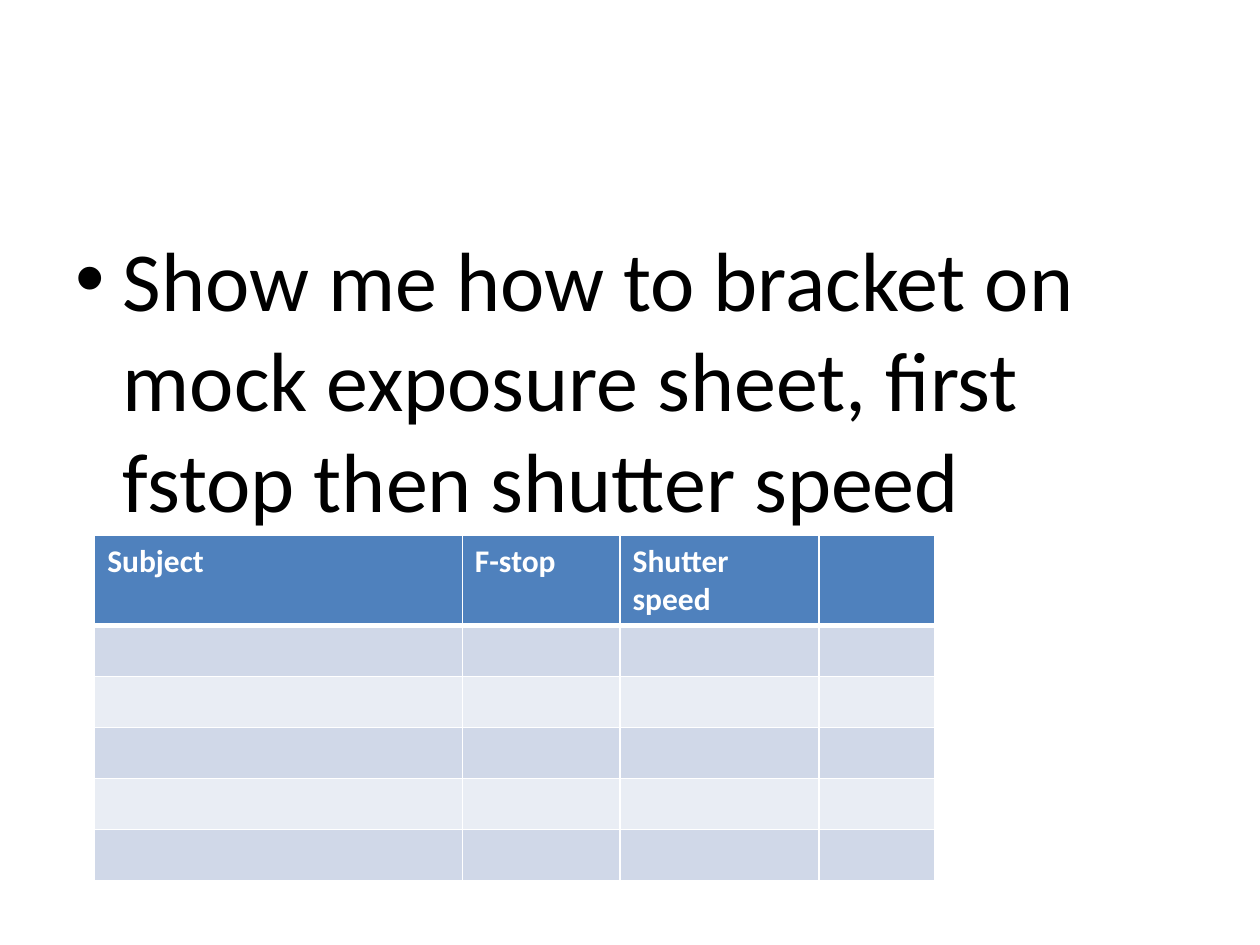
from lxml import etree
from pptx import Presentation
from pptx.dml.color import RGBColor
from pptx.oxml.ns import qn
from pptx.util import Cm, Pt

BLACK = RGBColor(0x00, 0x00, 0x00)
WHITE = RGBColor(0xFF, 0xFF, 0xFF)
HEADER_BLUE = RGBColor(0x4F, 0x81, 0xBD)
BAND_DARK = RGBColor(0xD0, 0xD8, 0xE8)
BAND_LIGHT = RGBColor(0xE9, 0xED, 0xF4)

TITLE_AND_CONTENT = 1
HEADERS = ["Subject", "F-stop", "Shutter speed", ""]
COLUMN_WIDTHS = [7.41, 3.18, 4.01, 2.33]
BLANK_ROWS = 5
ROW_HEIGHT = 1.03


class SlideBuilder:
    font = "Calibri"

    def __init__(self, prs):
        self.s = prs.slides.add_slide(prs.slide_layouts[TITLE_AND_CONTENT])

    def add_run(self, p, text, size, color, bold=False):
        r = p.add_run()
        r.text = text
        r.font.name = self.font
        r.font.size = Pt(size)
        r.font.bold = bold
        r.font.color.rgb = color

    def drop_title(self):
        sp = self.s.shapes.title.element
        sp.getparent().remove(sp)

    def body(self, text, left, top, width, height):
        sp = self.s.placeholders[1]
        sp.left, sp.top = Cm(left), Cm(top)
        sp.width, sp.height = Cm(width), Cm(height)
        self.add_run(sp.text_frame.paragraphs[0], text, 48, BLACK)

    def borders(self, cell, top, bottom):
        tc_pr = cell._tc.get_or_add_tcPr()
        widths = {"a:lnL": 1, "a:lnR": 1, "a:lnT": top, "a:lnB": bottom}
        for i, (tag, width) in enumerate(widths.items()):
            ln = etree.Element(qn(tag), w=str(Pt(width)))
            fill = etree.SubElement(ln, qn("a:solidFill"))
            etree.SubElement(fill, qn("a:srgbClr"), val=str(WHITE))
            tc_pr.insert(i, ln)

    def table(self, left, top):
        rows = BLANK_ROWS + 1
        table = self.s.shapes.add_table(
            rows, len(HEADERS), Cm(left), Cm(top),
            Cm(sum(COLUMN_WIDTHS)), Cm(ROW_HEIGHT * rows)).table
        for column, width in zip(table.columns, COLUMN_WIDTHS):
            column.width = Cm(width)

        for i, row in enumerate(table.rows):
            row.height = Cm(ROW_HEIGHT)
            band = BAND_DARK if i % 2 else BAND_LIGHT
            for cell in row.cells:
                cell.fill.solid()
                cell.fill.fore_color.rgb = band if i else HEADER_BLUE
                # Thick rule between the header and the first row
                self.borders(cell, 3 if i == 1 else 1, 3 if i == 0 else 1)

        for cell, text in zip(table.rows[0].cells, HEADERS):
            if text:
                p = cell.text_frame.paragraphs[0]
                self.add_run(p, text, 18, WHITE, bold=True)


def main():
    prs = Presentation()
    prs.slide_width, prs.slide_height = Cm(25.4), Cm(19.05)
    slide = SlideBuilder(prs)

    # Instruction
    slide.drop_title()
    slide.body("Show me how to bracket on mock exposure sheet, "
               "first fstop then shutter speed", 1.27, 4.45, 22.86, 12.57)

    # Mock exposure sheet
    slide.table(1.91, 10.8)

    prs.save("out.pptx")


if __name__ == "__main__":
    main()
